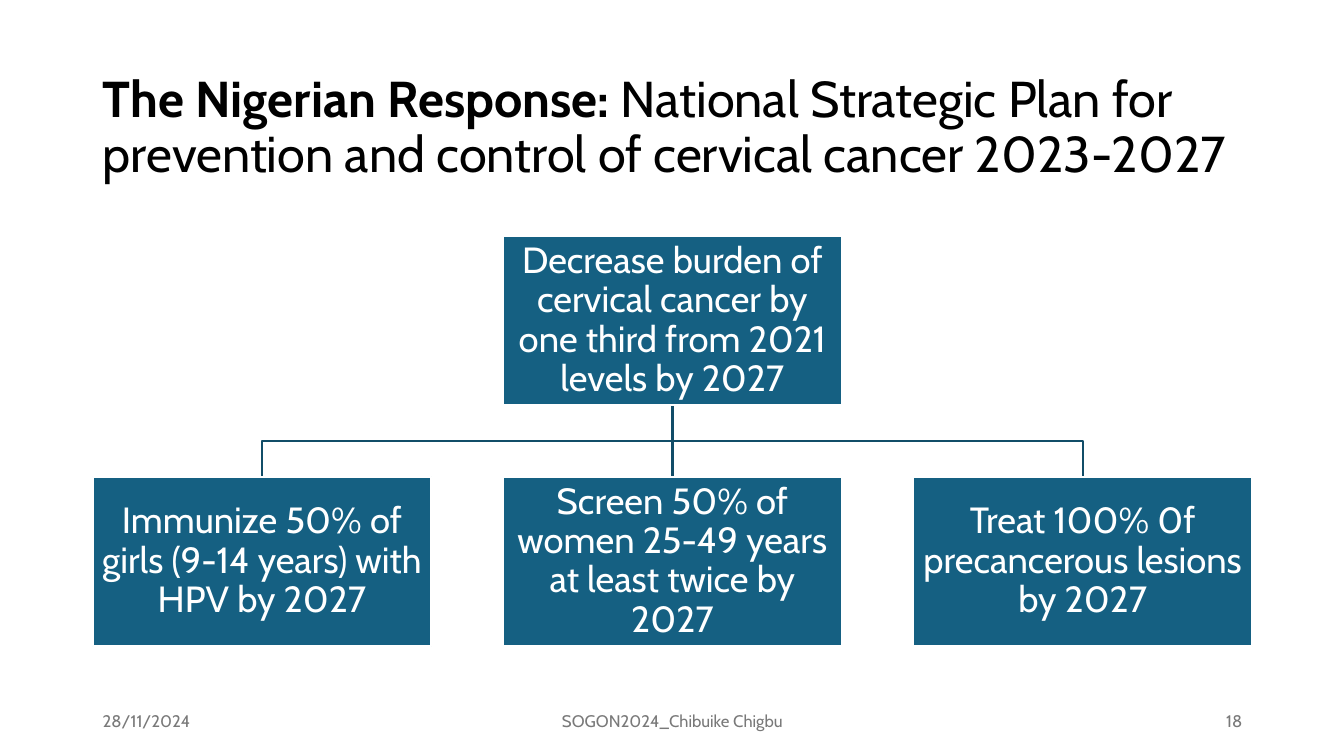
from lxml import etree
from pptx import Presentation
from pptx.dml.color import RGBColor
from pptx.enum.shapes import MSO_CONNECTOR, MSO_SHAPE
from pptx.enum.text import MSO_ANCHOR, MSO_AUTO_SIZE, PP_ALIGN
from pptx.oxml.ns import qn
from pptx.util import Inches, Pt

FONT = "Cabin"
LINE_COLOR = "114D68"
BOX_WIDTH, BOX_HEIGHT = 3.36, 1.68
GOAL_TOP, TARGET_TOP = 2.34, 4.73
LEFT_MARGIN, COLUMN_STEP = 0.92, 4.07


def color(hex_string):
    return RGBColor.from_string(hex_string)


def add_run(paragraph, text, size, hex_string, bold=False):
    run = paragraph.add_run()
    run.text = text
    run.font.name = FONT
    run.font.size = Pt(size)
    run.font.bold = bold
    run.font.color.rgb = color(hex_string)


presentation = Presentation()
presentation.slide_width = Inches(13.33)
presentation.slide_height = Inches(7.5)
slide = presentation.slides.add_slide(presentation.slide_layouts[5])

# Title
title = slide.shapes.title
title.left, title.top = Inches(LEFT_MARGIN), Inches(0.55)
title.width, title.height = Inches(11.5), Inches(1.45)
title.text_frame.auto_size = MSO_AUTO_SIZE.NONE
title.text_frame.word_wrap = True
title.text_frame.vertical_anchor = MSO_ANCHOR.MIDDLE
paragraph = title.text_frame.paragraphs[0]
paragraph.alignment = PP_ALIGN.LEFT
paragraph.line_spacing = 0.9
add_run(paragraph, "The Nigerian Response: ", 36, "000000", bold=True)
add_run(paragraph, "National Strategic Plan for prevention and control of "
        "cervical cancer 2023-2027", 36, "000000")

# Branches from the goal to the targets, behind the boxes
column_lefts = [LEFT_MARGIN + column * COLUMN_STEP for column in range(3)]
column_centers = [left + BOX_WIDTH / 2 for left in column_lefts]
trunk_x = column_centers[1]
goal_bottom = GOAL_TOP + BOX_HEIGHT
branch_y = (goal_bottom + TARGET_TOP) / 2

for target_x in (column_centers[2], column_centers[0]):
    builder = slide.shapes.build_freeform(Inches(trunk_x), Inches(goal_bottom))
    corners = [(trunk_x, branch_y), (target_x, branch_y), (target_x, TARGET_TOP)]
    builder.add_line_segments([(Inches(x), Inches(y)) for x, y in corners], close=False)
    branch = builder.convert_to_shape()
    branch.shadow.inherit = False
    branch.fill.background()
    branch.line.color.rgb = color(LINE_COLOR)
    branch.line.width = Pt(1.5)

trunk = slide.shapes.add_connector(
    MSO_CONNECTOR.STRAIGHT, Inches(trunk_x), Inches(goal_bottom),
    Inches(trunk_x), Inches(TARGET_TOP))
trunk.line.color.rgb = color(LINE_COLOR)
trunk.line.width = Pt(1.5)
etree.SubElement(trunk._element.spPr, qn("a:effectLst"))

# Goal and target boxes
box_items = [
    (1, GOAL_TOP, "Decrease burden of cervical cancer by one third from 2021 levels by 2027"),
    (0, TARGET_TOP, "Immunize 50% of girls (9-14 years) with HPV by 2027"),
    (1, TARGET_TOP, "Screen 50% of women 25-49 years at least twice by 2027"),
    (2, TARGET_TOP, "Treat 100% 0f precancerous lesions by 2027"),
]
boxes = []
for column, top, text in box_items:
    box = slide.shapes.add_shape(
        MSO_SHAPE.RECTANGLE, Inches(column_lefts[column]), Inches(top),
        Inches(BOX_WIDTH), Inches(BOX_HEIGHT))
    box.shadow.inherit = False
    box.fill.solid()
    box.fill.fore_color.rgb = color("156082")
    box.line.color.rgb = color("FFFFFF")
    box.line.width = Pt(1.5)
    frame = box.text_frame
    frame.word_wrap = True
    frame.vertical_anchor = MSO_ANCHOR.MIDDLE
    frame.margin_left = frame.margin_right = Inches(0.02)
    frame.margin_top = frame.margin_bottom = Inches(0.02)
    paragraph = frame.paragraphs[0]
    paragraph.alignment = PP_ALIGN.CENTER
    paragraph.line_spacing = 0.9
    add_run(paragraph, text, 26, "FFFFFF")
    boxes.append(box)

trunk.begin_connect(boxes[0], 2)
trunk.end_connect(boxes[2], 0)

# Footer
footer_items = [
    (0.92, 3, PP_ALIGN.LEFT, "28/11/2024"),
    (4.42, 4.5, PP_ALIGN.CENTER, "SOGON2024_Chibuike Chigbu"),
    (9.42, 3, PP_ALIGN.RIGHT, "18"),
]
for left, width, alignment, text in footer_items:
    footer = slide.shapes.add_textbox(Inches(left), Inches(6.95), Inches(width), Inches(0.4))
    footer.text_frame.word_wrap = True
    footer.text_frame.vertical_anchor = MSO_ANCHOR.MIDDLE
    paragraph = footer.text_frame.paragraphs[0]
    paragraph.alignment = alignment
    add_run(paragraph, text, 12, "797979")

presentation.save("out.pptx")
